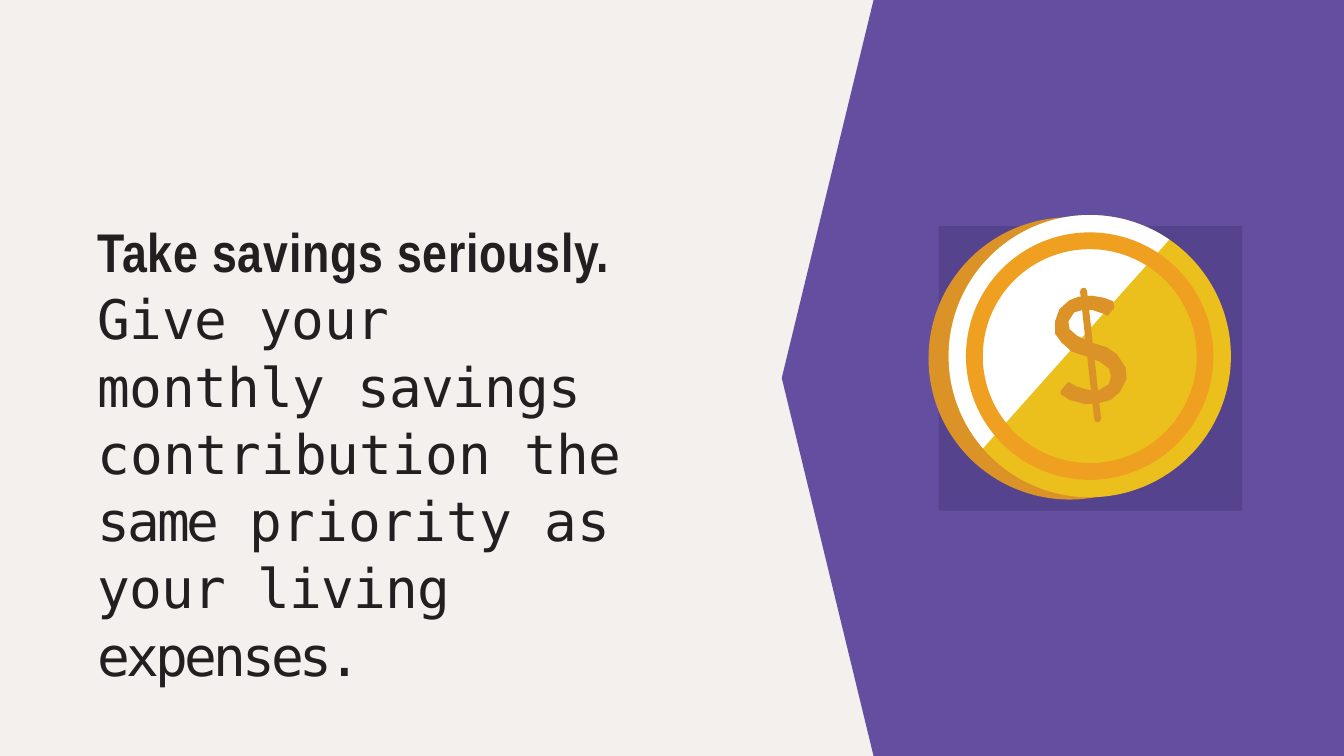
import pptx
import pptx.dml.color
import pptx.enum.shapes
import pptx.enum.text
import pptx.oxml.ns
import pptx.util
from lxml import etree

RGBColor = pptx.dml.color.RGBColor
Shapes = pptx.enum.shapes.MSO_SHAPE

CREAM = RGBColor(0xF3, 0xF0, 0xEE)
PURPLE = RGBColor(0x63, 0x4E, 0xA0)
DEEP_PURPLE = RGBColor(0x56, 0x43, 0x8D)
INK = RGBColor(0x23, 0x1F, 0x20)
BRONZE = RGBColor(0xDB, 0x93, 0x27)
GOLD = RGBColor(0xEC, 0xC0, 0x1C)
ORANGE = RGBColor(0xF0, 0xA0, 0x20)
WHITE = RGBColor(0xFF, 0xFF, 0xFF)

# Square grid cells
COLUMNS, ROWS = 48, 27
CELL = pptx.util.Inches(0.25)

COIN_CENTRE = (38.92, 12.72)
COIN_RADIUS = 5.04

# Dollar sign outline around the coin centre, in 25ths of a cell
DOLLAR_CURVE = [
    (16, -36), (22, -43), (21, -49), (13, -52), (2, -54), (-10, -53), (-18, -50),
    (-27, -42), (-31, -31), (-31, -20), (-25, -12), (-16, -4), (-4, 0), (9, 5),
    (17, 11), (19, 18), (17, 25), (7, 31), (-2, 30), (-12, 27), (-19, 23),
    (-26, 31), (-26, 34), (-18, 39), (-4, 43), (8, 42), (19, 39), (27, 32),
    (33, 20), (32, 10), (24, -2), (15, -8), (2, -12), (-11, -18), (-18, -24),
    (-19, -31), (-14, -39), (-7, -41), (3, -41), (12, -38),
]
DOLLAR_BAR = [(-5.5, -58), (7, 56)]

# Body words with their letter spacing in points
BODY = [
    ("Give your ", -0.25), ("monthly ", -0.2), ("savings ", -0.7),
    ("contribution ", 0), ("the ", -0.5), ("same ", -1.9),
    ("priority as ", 0), ("your living ", -0.5), ("expenses.", -2.5),
]


def add_text(paragraph, text, font="DejaVu Sans Mono", size=35, bold=False,
             color=INK, spacing=0):
    run = paragraph.add_run()
    run.text = text
    run.font.name = font
    run.font.size = pptx.util.Pt(size)
    run.font.bold = bold
    run.font.color.rgb = color
    run.font._element.set("spc", str(round(spacing * 100)))


def around_coin(points):
    column, row = COIN_CENTRE
    return [(column + x / 25, row + y / 25) for x, y in points]


class Canvas:
    """Holds the grid and the current slide."""

    def __init__(self, presentation, background):
        self.slide = presentation.slides.add_slide(presentation.slide_layouts[5])
        self.slide.background.fill.solid()
        self.slide.background.fill.fore_color.rgb = background

    def at(self, *lengths):
        return [round(length * CELL) for length in lengths]

    def paint(self, shape, fill=None, line=None, line_width=0):
        shape.shadow.inherit = False
        if fill is None:
            shape.fill.background()
        else:
            shape.fill.solid()
            shape.fill.fore_color.rgb = fill
        if line is None:
            shape.line.fill.background()
        else:
            shape.line.color.rgb = line
            shape.line.width = pptx.util.Pt(line_width)
        return shape

    def preset(self, kind, left, top, width, height, **style):
        box = self.at(left, top, width, height)
        return self.paint(self.slide.shapes.add_shape(kind, *box), **style)

    def disc(self, centre, radius, kind=Shapes.OVAL, **style):
        column, row = centre
        return self.preset(kind, column - radius, row - radius,
                           2 * radius, 2 * radius, **style)

    def polygon(self, points, **style):
        corners = [self.at(*point) for point in points]
        builder = self.slide.shapes.build_freeform(*corners[0])
        builder.add_line_segments(corners[1:], close=True)
        return self.paint(builder.convert_to_shape(), **style)

    def line(self, start, end, color, line_width):
        connector = self.slide.shapes.add_connector(
            pptx.enum.shapes.MSO_CONNECTOR.STRAIGHT, *self.at(*start, *end))
        connector.line.color.rgb = color
        connector.line.width = pptx.util.Pt(line_width)
        properties = connector._element.spPr
        properties.find(pptx.oxml.ns.qn("a:ln")).set("cap", "rnd")
        etree.SubElement(properties, pptx.oxml.ns.qn("a:effectLst"))

    def title(self, left, top, width, height, line_spacing):
        title = self.slide.shapes.title
        title.left, title.top, title.width, title.height = self.at(
            left, top, width, height)
        frame = title.text_frame
        frame.margin_left = frame.margin_right = 0
        frame.margin_top = frame.margin_bottom = 0
        frame.word_wrap = True
        frame.auto_size = pptx.enum.text.MSO_AUTO_SIZE.NONE
        frame.vertical_anchor = pptx.enum.text.MSO_ANCHOR.TOP
        paragraph = frame.paragraphs[0]
        paragraph.alignment = pptx.enum.text.PP_ALIGN.LEFT
        paragraph.line_spacing = line_spacing
        return paragraph


def main():
    presentation = pptx.Presentation()
    presentation.slide_width = COLUMNS * CELL
    presentation.slide_height = ROWS * CELL
    canvas = Canvas(presentation, CREAM)

    # Purple panel pointing left
    canvas.polygon([(COLUMNS, 0), (31.2, 0), (27.92, ROWS / 2),
                    (31.2, ROWS), (COLUMNS, ROWS)], fill=PURPLE)

    # Message
    message = canvas.title(3.48, 7.72, 19.08, 16.5, line_spacing=1.03)
    add_text(message, "Take savings seriously. ", font="Arial Narrow",
             bold=True, spacing=0.5)
    for words, spacing in BODY:
        add_text(message, words, spacing=spacing)

    # Coin on its dark square
    canvas.preset(Shapes.RECTANGLE, 33.52, 8.08, 10.84, 10.16, fill=DEEP_PURPLE)
    canvas.disc((38.2, 12.8), COIN_RADIUS, fill=BRONZE)
    canvas.disc(COIN_CENTRE, COIN_RADIUS, fill=GOLD)
    shine = canvas.disc(COIN_CENTRE, COIN_RADIUS, kind=Shapes.CHORD, fill=WHITE)
    for index, degrees in enumerate((139.2, 304.3)):
        shine.adjustments[index] = degrees * 0.6  # 60000ths of a degree
    canvas.disc(COIN_CENTRE, 4.12, line=ORANGE, line_width=10.81)

    # Dollar sign
    canvas.polygon(around_coin(DOLLAR_CURVE), fill=BRONZE)
    canvas.line(*around_coin(DOLLAR_BAR), color=BRONZE, line_width=4.5)

    presentation.save("out.pptx")


if __name__ == "__main__":
    main()
